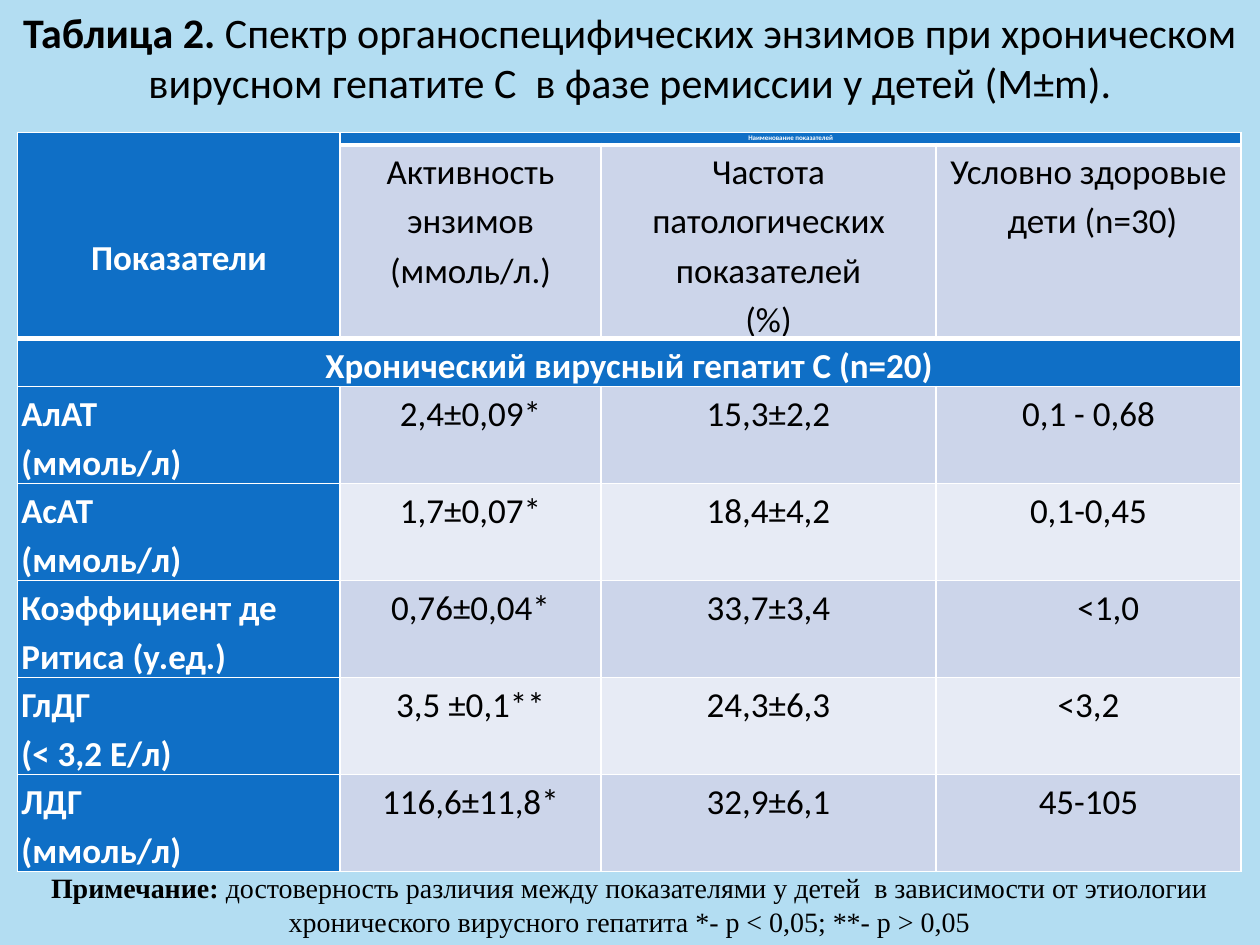
from lxml import etree
from pptx import Presentation
from pptx.dml.color import RGBColor
from pptx.enum import text as t
from pptx.oxml.ns import qn
from pptx.util import Inches, Pt

SKY = RGBColor(0xB3, 0xDD, 0xF2)
BLUE = RGBColor(0x0F, 0x6F, 0xC6)
BAND_DARK = RGBColor(0xCC, 0xD5, 0xEA)
BAND_LIGHT = RGBColor(0xE7, 0xEB, 0xF5)
WHITE = RGBColor(0xFF, 0xFF, 0xFF)
BLACK = RGBColor(0, 0, 0)
LEFT, CENTER = t.PP_ALIGN.LEFT, t.PP_ALIGN.CENTER

# Content
TITLE = ("Таблица 2. ",
         "Спектр органоспецифических энзимов при хроническом вирусном "
         "гепатите С  в фазе ремиссии у детей (М±m).")
NOTE = ("Примечание: ",
        "достоверность различия между показателями у детей  в зависимости от "
        "этиологии хронического вирусного гепатита *- р < 0,05; **- р > 0,05")
CORNER = ["Показатели"]
GROUP = ["Наименование показателей"]
HEADERS = [["Активность энзимов (ммоль/л.)"],
           ["Частота патологических показателей", "(%)"],
           ["Условно здоровые", " дети (n=30)"]]
SECTION = ["Хронический вирусный гепатит С (n=20)"]
ENZYMES = [
    (["АлАТ", "(ммоль/л)"], "2,4±0,09*", "15,3±2,2", "0,1 - 0,68"),
    (["АсАТ", "(ммоль/л)"], "1,7±0,07*", "18,4±4,2", "0,1-0,45"),
    (["Коэффициент де Ритиса (у.ед.)"], "0,76±0,04*", "33,7±3,4", " <1,0"),
    (["ГлДГ", "(< 3,2 Е/л)"], "3,5 ±0,1**", "24,3±6,3", "<3,2"),
    (["ЛДГ", "(ммоль/л)"], "116,6±11,8*", "32,9±6,1", "45-105"),
]
COLS = [2.56, 2.07, 2.66, 2.42]
ROWS = [0.1, 1.53, 0.38] + [0.77] * len(ENZYMES)


def add_run(p, words, size, color, bold, font="Calibri"):
    r = p.add_run()
    r.text = words
    r.font.name, r.font.size, r.font.bold = font, Pt(size), bold
    r.font.color.rgb = color


def fill_caption(sp, parts, size, font, anchor):
    """Centred paragraph with a bold lead and a regular remainder."""
    tf = sp.text_frame
    tf.word_wrap = True
    tf.auto_size = t.MSO_AUTO_SIZE.SHAPE_TO_FIT_TEXT
    tf.vertical_anchor = anchor
    tf.margin_left = tf.margin_right = Inches(0.1)
    tf.margin_top = tf.margin_bottom = Inches(0.05)
    p = tf.paragraphs[0]
    p.alignment, p.line_spacing = CENTER, 1.0
    p.space_before = Pt(0)
    for words, bold in zip(parts, (True, False)):
        add_run(p, words, size, BLACK, bold, font)


def set_borders(cell, row):
    """White grid, thicker under both header rows."""
    widths = {"L": 1, "R": 1, "T": 3 if row in (1, 2) else 1,
              "B": 3 if row in (0, 1) else 1}
    tcPr = cell._tc.get_or_add_tcPr()
    for i, (side, width) in enumerate(widths.items()):
        ln = etree.Element(qn("a:ln" + side), w=str(Pt(width)))
        solid = etree.SubElement(ln, qn("a:solidFill"))
        etree.SubElement(solid, qn("a:srgbClr"), val=str(WHITE))
        tcPr.insert(i, ln)


def fill_cell(cell, lines, fill, size=20, align=CENTER):
    cell.fill.solid()
    cell.fill.fore_color.rgb = fill
    strong = fill == BLUE
    tf = cell.text_frame
    for i, line in enumerate(lines):
        p = tf.add_paragraph() if i else tf.paragraphs[0]
        p.alignment, p.line_spacing = align, 1.15
        add_run(p, line, size, WHITE if strong else BLACK, strong)


prs = Presentation()
prs.slide_width, prs.slide_height = Inches(10), Inches(7.5)
s = prs.slides.add_slide(prs.slide_layouts[5])
s.background.fill.solid()
s.background.fill.fore_color.rgb = SKY

# Title
title = s.shapes.title
title.left, title.top = Inches(0), Inches(0)
title.width, title.height = Inches(10), Inches(0.91)
fill_caption(title, TITLE, 24, "Calibri", t.MSO_ANCHOR.TOP)

# Table grid
table = s.shapes.add_table(len(ROWS), len(COLS), Inches(0.14), Inches(1.05),
                           Inches(sum(COLS)), Inches(sum(ROWS))).table
for col, width in zip(table.columns, COLS):
    col.width = Inches(width)
for row, height in zip(table.rows, ROWS):
    row.height = Inches(height)
for i in range(len(ROWS)):
    for j in range(len(COLS)):
        cell = table.cell(i, j)
        cell.margin_left = cell.margin_right = Inches(0.03)
        cell.margin_top = cell.margin_bottom = 0
        cell.text_frame.paragraphs[0].font.size = Pt(4)
for first, last in (((0, 0), (1, 0)), ((0, 1), (0, 3)), ((2, 0), (2, 3))):
    table.cell(*first).merge(table.cell(*last))

# Header rows
fill_cell(table.cell(0, 0), CORNER, BLUE)
table.cell(0, 0).margin_top = Inches(0.78)
fill_cell(table.cell(0, 1), GROUP, BLUE, size=4)
for j, lines in enumerate(HEADERS, 1):
    fill_cell(table.cell(1, j), lines, BAND_DARK)
fill_cell(table.cell(2, 0), SECTION, BLUE)

# Enzyme rows
for i, (name, *values) in enumerate(ENZYMES, 3):
    fill_cell(table.cell(i, 0), name, BLUE, align=LEFT)
    for j, value in enumerate(values, 1):
        fill_cell(table.cell(i, j), [value], BAND_DARK if i % 2 else BAND_LIGHT)
ritis_norm = table.cell(5, 3).text_frame.paragraphs[0]
ritis_norm._p.get_or_add_pPr().set("marL", str(Inches(0.25)))

for i in range(len(ROWS)):
    for j in range(len(COLS)):
        set_borders(table.cell(i, j), i)

# Note
note = s.shapes.add_textbox(Inches(0.14), Inches(6.86), Inches(9.71), Inches(0.64))
fill_caption(note, NOTE, 16, "Times New Roman", t.MSO_ANCHOR.TOP)

prs.save("out.pptx")
